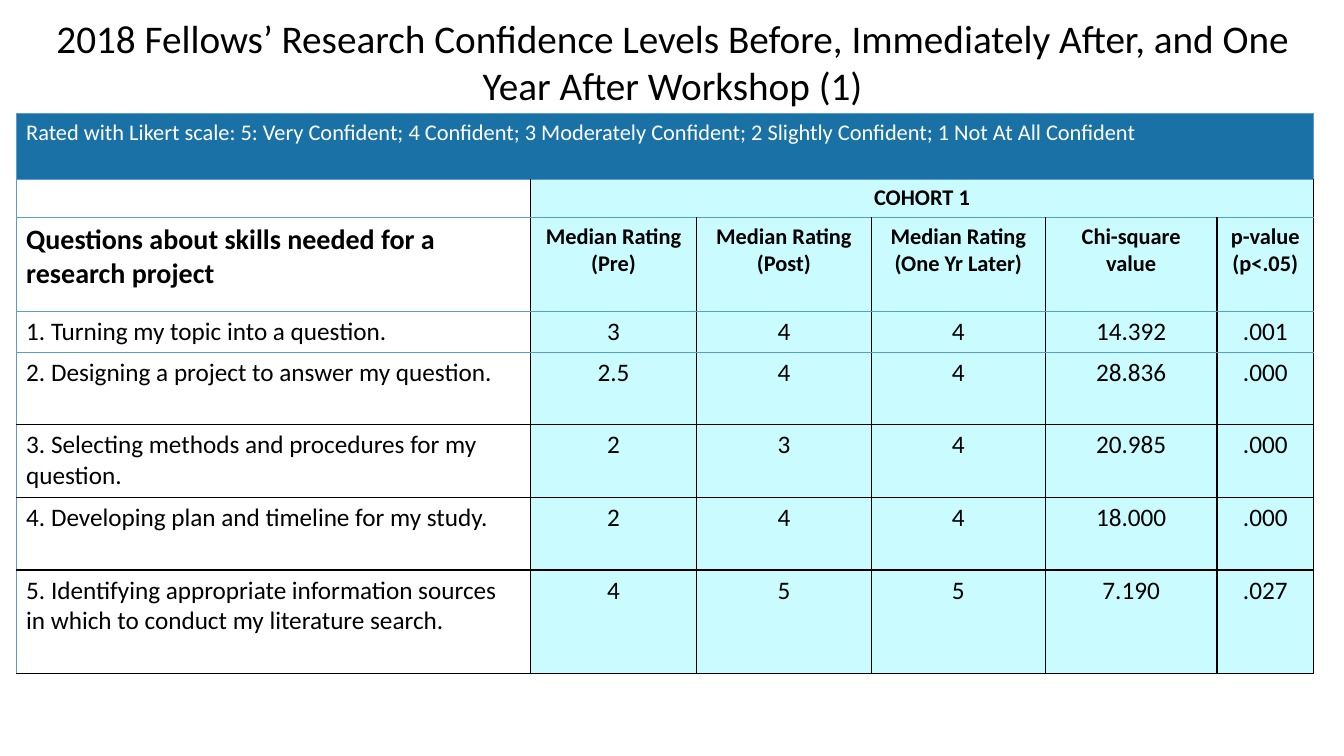
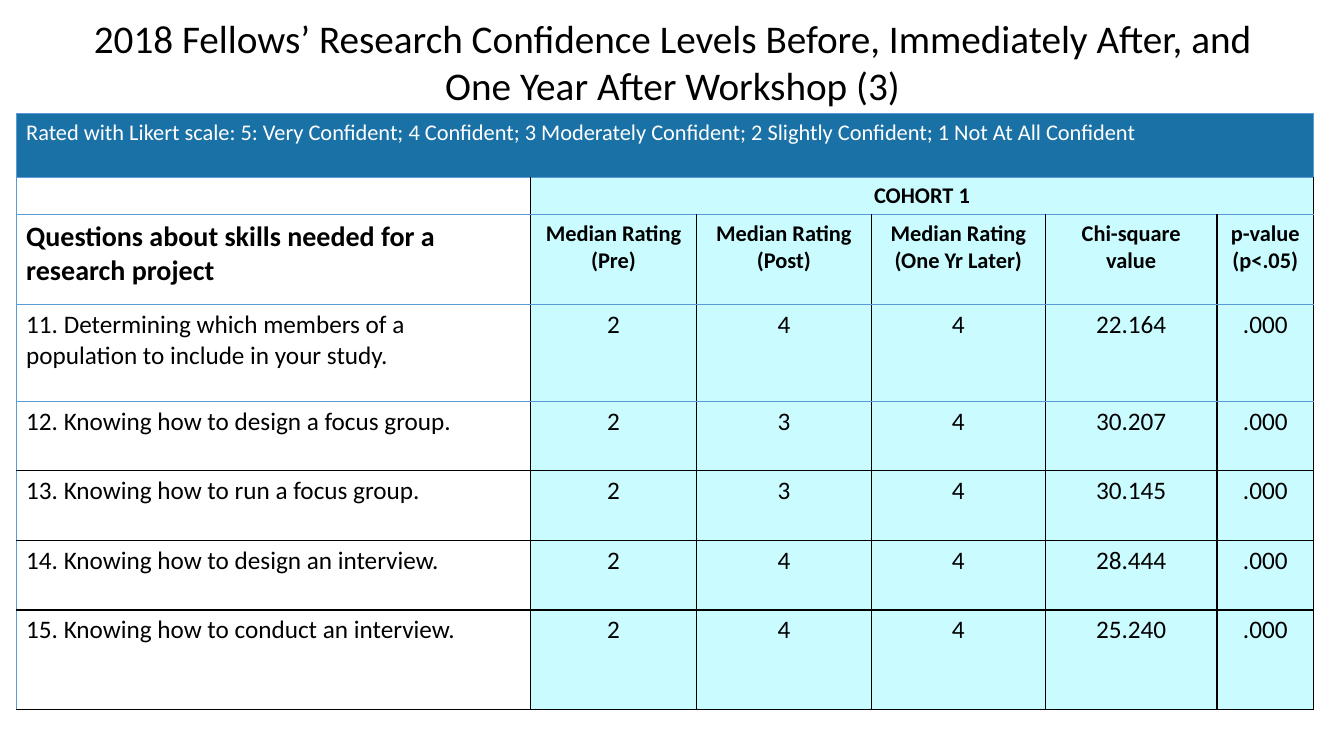
from dataclasses import dataclass

import lxml.etree
import pptx
import pptx.dml.color
import pptx.enum.text
import pptx.oxml.ns
import pptx.slide
import pptx.table
import pptx.text.text
import pptx.util

# Shared look; lengths are px, 100 to the inch
EMU_PER_PX = 9144
SLIDE_SIZE = (1333, 750)
TITLE_BOX = (32, 9, 1270, 104)
TABLE_LEFT, TABLE_TOP = 16, 113
COLUMN_WIDTHS = (510, 165, 173, 173, 170, 96)
FONT = "Calibri"
BLACK, WHITE = "000000", "FFFFFF"
BAND_BLUE, RULE_BLUE, PALE_CYAN = "1A71A6", "5B9BD5", "CAFCFF"
TITLE_SIZE, HEADING_SIZE, BODY_SIZE, HEADER_SIZE = 28, 20, 18, 16

# Header rows, the same on each slide
SCALE_ROW, COHORT_ROW, HEADING_ROW, FIRST_QUESTION_ROW = range(4)
LAST_BLUE_RULE = 4  # rule above this row is the last blue one
SCALE_NOTE = (
    "Rated with Likert scale: 5: Very Confident; 4 Confident; "
    "3 Moderately Confident; 2 Slightly Confident; 1 Not At All Confident"
)
HEADER_ROWS = [
    (SCALE_NOTE, "", "", "", "", ""),
    ("", "COHORT 1", "", "", "", ""),
    (
        "Questions about skills needed for a research project",
        "Median Rating\n(Pre)",
        "Median Rating\n(Post)",
        "Median Rating\n(One Yr Later)",
        "Chi-square value",
        "p-value (p<.05)",
    ),
]


@dataclass(frozen=True)
class Question:
    text: str
    before: str
    after: str
    year_later: str
    chi_square: str
    p_value: str

    def cells(self) -> tuple[str, ...]:
        return (self.text, self.before, self.after, self.year_later, self.chi_square, self.p_value)


@dataclass(frozen=True)
class ResultsSlide:
    title: str
    row_heights: tuple[int, ...]
    questions: tuple[Question, ...]


RESULTS = [
    ResultsSlide(
        "2018 Fellows’ Research Confidence Levels Before, Immediately After, and One Year After Workshop (1)",
        (65, 38, 93, 40, 72, 72, 72, 103),
        (
            Question("1. Turning my topic into a question.", "3", "4", "4", "14.392", ".001"),
            Question("2. Designing a project to answer my question.", "2.5", "4", "4", "28.836", ".000"),
            Question("3. Selecting methods and procedures for my question.", "2", "3", "4", "20.985", ".000"),
            Question("4. Developing plan and timeline for my study.", "2", "4", "4", "18.000", ".000"),
            Question(
                "5. Identifying appropriate information sources in which to conduct my literature search.",
                "4", "5", "5", "7.190", ".027",
            ),
        ),
    ),
    ResultsSlide(
        "2018 Fellows’ Research Confidence Levels Before, Immediately After, and\vOne Year After Workshop (3)",
        (63, 36, 89, 96, 69, 69, 69, 99),
        (
            Question(
                "11. Determining which members of a population to include in your study.",
                "2", "4", "4", "22.164", ".000",
            ),
            Question("12. Knowing how to design a focus group.", "2", "3", "4", "30.207", ".000"),
            Question("13. Knowing how to run a focus group.", "2", "3", "4", "30.145", ".000"),
            Question("14. Knowing how to design an interview.", "2", "4", "4", "28.444", ".000"),
            Question("15. Knowing how to conduct an interview.", "2", "4", "4", "25.240", ".000"),
        ),
    ),
]


def px(length: int) -> pptx.util.Emu:
    return pptx.util.Emu(length * EMU_PER_PX)


def rgb(colour: str) -> pptx.dml.color.RGBColor:
    return pptx.dml.color.RGBColor.from_string(colour)


def format_text(
    text_frame: pptx.text.text.TextFrame, size: int, colour: str, bold: bool, centred: bool
) -> None:
    align = pptx.enum.text.PP_ALIGN
    for paragraph in text_frame.paragraphs:
        paragraph.alignment = align.CENTER if centred else align.LEFT
        for run in paragraph.runs:
            run.font.name = FONT
            run.font.size = pptx.util.Pt(size)
            run.font.bold = bold
            run.font.color.rgb = rgb(colour)
        if not paragraph.runs:
            # An empty cell still needs a text size, or its row grows
            end = lxml.etree.SubElement(paragraph._p, pptx.oxml.ns.qn("a:endParaRPr"))
            end.set("sz", str(size * 100))


def add_title(slide: pptx.slide.Slide, text: str) -> None:
    title = slide.shapes.title
    title.left, title.top, title.width, title.height = map(px, TITLE_BOX)
    text_frame = title.text_frame
    text_frame.text = text
    text_frame.word_wrap = True
    text_frame.auto_size = pptx.enum.text.MSO_AUTO_SIZE.NONE
    text_frame.vertical_anchor = pptx.enum.text.MSO_ANCHOR.TOP
    format_text(text_frame, TITLE_SIZE, BLACK, bold=False, centred=True)


def set_borders(cell: pptx.table._Cell, row: int, column: int) -> None:
    in_scale_row = row == SCALE_ROW
    blue_edges = {
        "a:lnL": in_scale_row or column == 0,
        "a:lnR": in_scale_row,
        "a:lnT": row <= LAST_BLUE_RULE,
        "a:lnB": row < LAST_BLUE_RULE,
    }
    properties = cell._tc.get_or_add_tcPr()
    for position, (edge, is_blue) in enumerate(blue_edges.items()):
        line = lxml.etree.Element(pptx.oxml.ns.qn(edge), w=str(pptx.util.Pt(1)))
        fill = lxml.etree.SubElement(line, pptx.oxml.ns.qn("a:solidFill"))
        colour = RULE_BLUE if is_blue else BLACK
        lxml.etree.SubElement(fill, pptx.oxml.ns.qn("a:srgbClr"), val=colour)
        properties.insert(position, line)


def format_cell(cell: pptx.table._Cell, row: int, column: int) -> None:
    in_scale_row = row == SCALE_ROW
    if in_scale_row:
        background = BAND_BLUE
    else:
        background = WHITE if column == 0 else PALE_CYAN
    if row >= FIRST_QUESTION_ROW:
        size = BODY_SIZE
    else:
        size = HEADING_SIZE if (row, column) == (HEADING_ROW, 0) else HEADER_SIZE
    cell.fill.solid()
    cell.fill.fore_color.rgb = rgb(background)
    format_text(
        cell.text_frame,
        size,
        WHITE if in_scale_row else BLACK,
        bold=row in (COHORT_ROW, HEADING_ROW),
        centred=column > 0,
    )
    set_borders(cell, row, column)


def add_results_table(slide: pptx.slide.Slide, results: ResultsSlide) -> None:
    rows = HEADER_ROWS + [question.cells() for question in results.questions]
    table = slide.shapes.add_table(
        len(rows), len(COLUMN_WIDTHS),
        px(TABLE_LEFT), px(TABLE_TOP),
        px(sum(COLUMN_WIDTHS)), px(sum(results.row_heights)),
    ).table
    table.first_row = table.horz_banding = False
    for column, width in zip(table.columns, COLUMN_WIDTHS):
        column.width = px(width)
    for row, height in zip(table.rows, results.row_heights):
        row.height = px(height)

    # Joined header cells
    last_column = len(COLUMN_WIDTHS) - 1
    for row, first_column in ((SCALE_ROW, 0), (COHORT_ROW, 1)):
        table.cell(row, first_column).merge(table.cell(row, last_column))

    # Text and formatting
    for row, texts in enumerate(rows):
        for column, text in enumerate(texts):
            cell = table.cell(row, column)
            cell.text_frame.text = text
            format_cell(cell, row, column)


def main() -> None:
    presentation = pptx.Presentation()
    presentation.slide_width, presentation.slide_height = map(px, SLIDE_SIZE)
    title_only = presentation.slide_layouts.get_by_name("Title Only")
    for results in RESULTS:
        slide = presentation.slides.add_slide(title_only)
        add_results_table(slide, results)
        add_title(slide, results.title)
    presentation.save("out.pptx")


if __name__ == "__main__":
    main()
